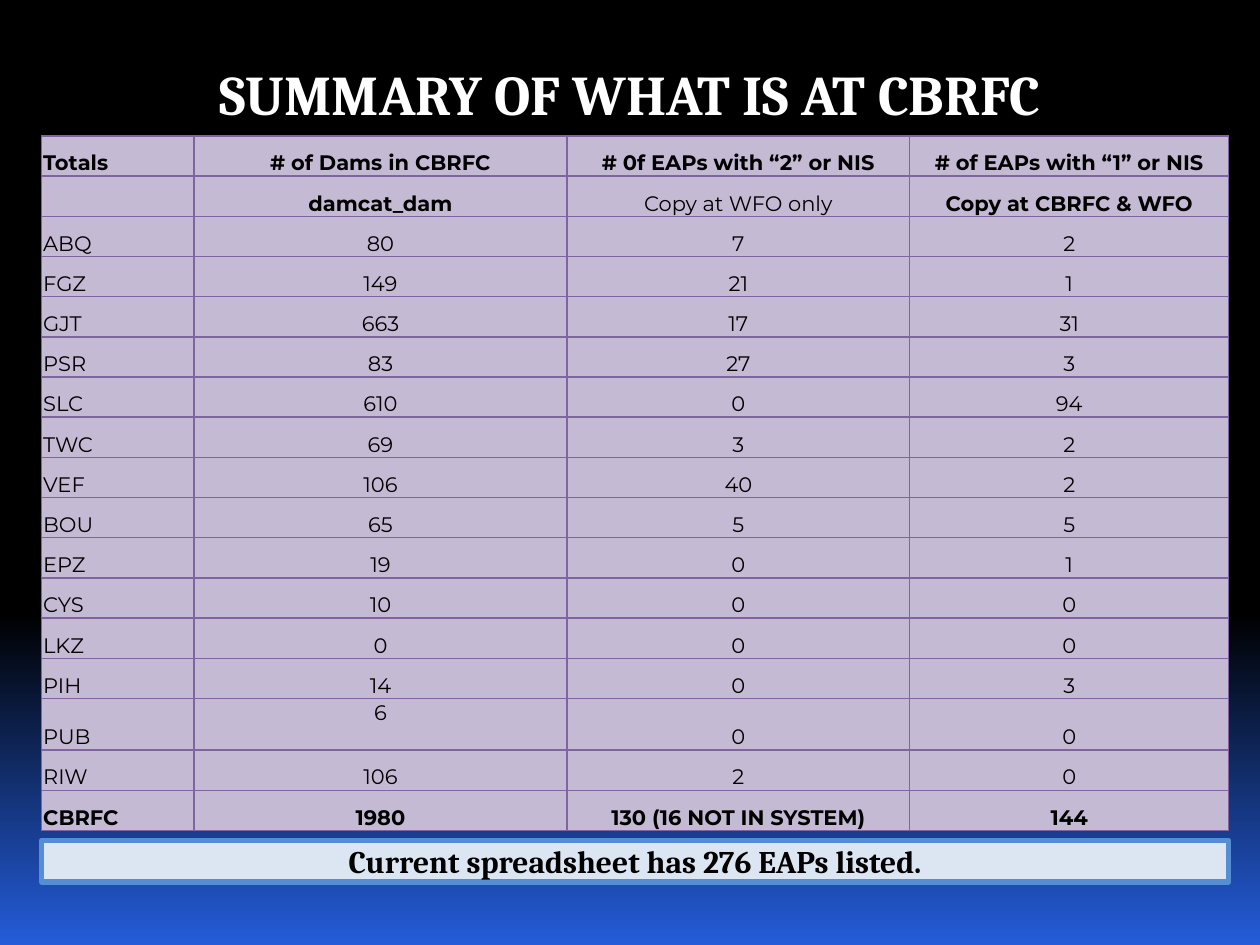
from lxml import etree
from pptx import Presentation
from pptx.dml.color import RGBColor
from pptx.enum.shapes import MSO_SHAPE
from pptx.enum.text import MSO_ANCHOR, PP_ALIGN
from pptx.oxml.ns import qn
from pptx.util import Cm, Pt

RECT = MSO_SHAPE.RECTANGLE
TOP, MIDDLE, BOTTOM = MSO_ANCHOR.TOP, MSO_ANCHOR.MIDDLE, MSO_ANCHOR.BOTTOM
LEFT, CENTER = PP_ALIGN.LEFT, PP_ALIGN.CENTER


class Theme:
    black = RGBColor.from_string("000000")
    white = RGBColor.from_string("FFFFFF")
    blue = RGBColor.from_string("245CD9")
    cell = RGBColor.from_string("C5BAD4")
    grid = "8064A2"
    note = RGBColor.from_string("DCE6F2")
    note_line = RGBColor.from_string("558ED5")
    heading_font, table_font = "Cambria", "Montserrat"
    title_size, note_size, table_size = Pt(32), Pt(18), Pt(12)
    grid_width, note_width = Pt(0.94), Pt(3)


def write(tf, text, font=Theme.heading_font, size=Theme.note_size,
          color=Theme.black, bold=True, align=CENTER, anchor=MIDDLE):
    tf.vertical_anchor = anchor
    p = tf.paragraphs[0]
    p.alignment = align
    r = p.add_run()
    r.text = text
    r.font.name, r.font.size, r.font.bold = font, size, bold
    r.font.color.rgb = color


def add_borders(cell):
    tcPr = cell._tc.get_or_add_tcPr()
    for side in ("a:lnL", "a:lnR", "a:lnT", "a:lnB"):
        ln = etree.SubElement(tcPr, qn(side), w=str(int(Theme.grid_width)))
        fill = etree.SubElement(ln, qn("a:solidFill"))
        etree.SubElement(fill, qn("a:srgbClr"), val=Theme.grid)


prs = Presentation()
prs.slide_width, prs.slide_height = Cm(25.4), Cm(19.05)
s = prs.slides.add_slide(prs.slide_layouts[5])

# Background: black, fading to blue at the bottom
bg = s.background.fill
bg.gradient()
bg.gradient_angle = 270
for stop, (position, color) in zip(bg.gradient_stops,
                                   [(0.65, Theme.black), (1, Theme.blue)]):
    stop.position = position
    stop.color.rgb = color

# Table of dams and EAPs by office
rows = [
    ("Totals", "# of Dams in CBRFC", "# 0f EAPs with “2” or NIS",
     "# of EAPs with “1” or NIS"),
    ("", "damcat_dam", "Copy at WFO only", "Copy at CBRFC & WFO"),
    ("ABQ", 80, 7, 2),
    ("FGZ", 149, 21, 1),
    ("GJT", 663, 17, 31),
    ("PSR", 83, 27, 3),
    ("SLC", 610, 0, 94),
    ("TWC", 69, 3, 2),
    ("VEF", 106, 40, 2),
    ("BOU", 65, 5, 5),
    ("EPZ", 19, 0, 1),
    ("CYS", 10, 0, 0),
    ("LKZ", 0, 0, 0),
    ("PIH", 14, 0, 3),
    ("PUB", 6, 0, 0),
    ("RIW", 106, 2, 0),
    ("CBRFC", 1980, "130 (16 NOT IN SYSTEM)", 144),
]
left, width = Cm(0.84), Cm(23.93)
table = s.shapes.add_table(len(rows), 4, left, Cm(2.74), width, Cm(14)).table
for col, col_width in zip(table.columns, (3.07, 7.52, 6.91, 6.43)):
    col.width = Cm(col_width)

for i, values in enumerate(rows):
    table.rows[i].height = Cm(1.04 if values[0] == "PUB" else 0.81)
    for j, value in enumerate(values):
        cell = table.cell(i, j)
        add_borders(cell)
        cell.fill.solid()
        cell.fill.fore_color.rgb = Theme.cell
        cell.margin_left = cell.margin_right = cell.margin_top = Cm(0.03)
        cell.margin_bottom = 0
        cell.vertical_anchor = TOP if (values[0], j) == ("PUB", 1) else BOTTOM
        if value == "":
            continue
        bold = i in (0, len(rows) - 1) or (i == 1 and j != 2)
        write(cell.text_frame, str(value), font=Theme.table_font,
              size=Theme.table_size, bold=bold, anchor=None,
              align=CENTER if j else LEFT)

# Title
title = s.shapes.title
title.left, title.top, title.width, title.height = Cm(1.7), Cm(1.07), Cm(22), Cm(1.63)
write(title.text_frame, "SUMMARY OF WHAT IS AT CBRFC",
      size=Theme.title_size, color=Theme.white, anchor=TOP)

# Note under the table
note = s.shapes.add_shape(RECT, left, Cm(16.94), width, Cm(0.84))
note.shadow.inherit = False
note.fill.solid()
note.fill.fore_color.rgb = Theme.note
note.line.color.rgb = Theme.note_line
note.line.width = Theme.note_width
write(note.text_frame, "Current spreadsheet has 276 EAPs listed.")

prs.save("out.pptx")
